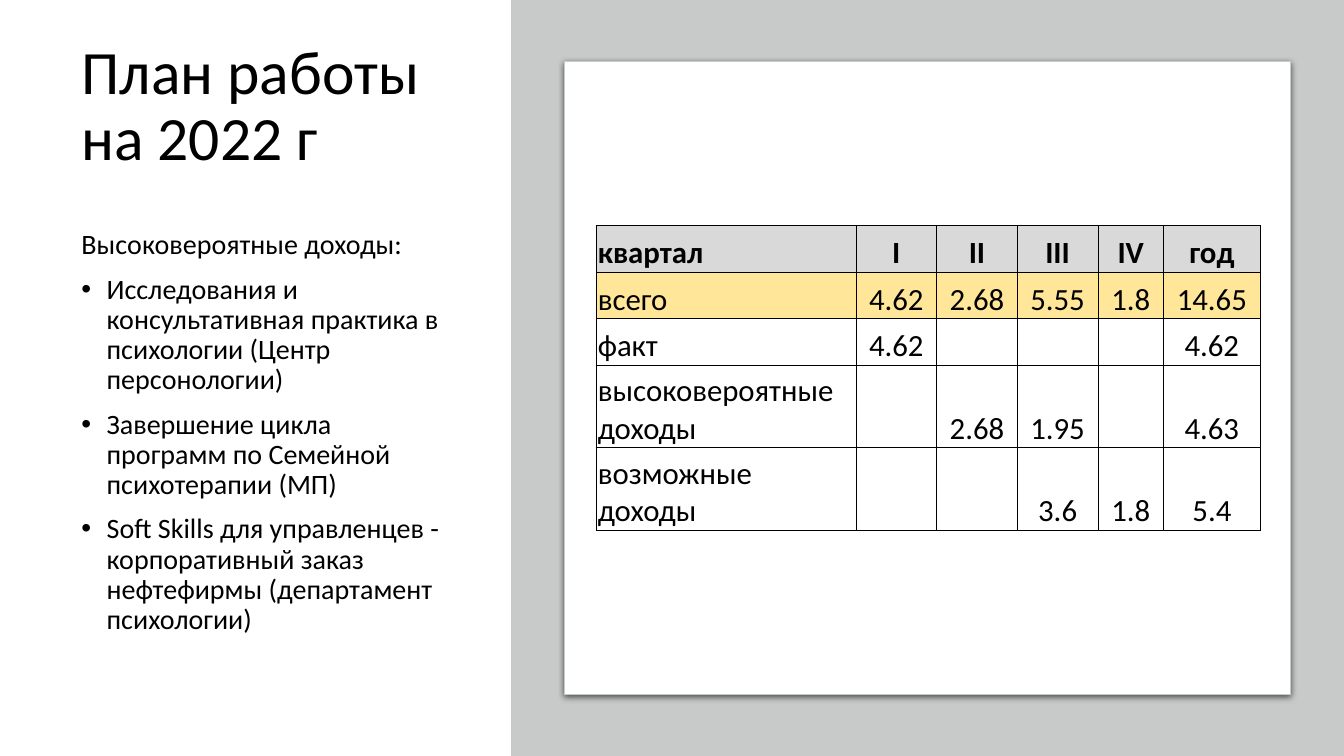
from dataclasses import dataclass
from typing import Optional

from lxml.etree import SubElement
from pptx import Presentation
from pptx.dml.color import RGBColor
from pptx.enum.shapes import MSO_SHAPE as Preset
from pptx.enum.text import MSO_ANCHOR as Anchor, PP_ALIGN as Align
from pptx.oxml.ns import qn
from pptx.util import Inches, Pt

FONT = "Calibri"
BLACK, WHITE, GRAY = "000000", "FFFFFF", "C8CACA"


@dataclass
class TextBlock:
    top: float
    height: float
    size: float
    anchor: Anchor
    lines: list[str]
    space_before: float = 0
    first_bullet: int = 99


@dataclass
class Panel:
    preset: Preset
    left: float
    top: float
    width: float
    height: float
    fill: str
    line: Optional[str] = None
    shadow: bool = False


@dataclass
class TableRow:
    height: float
    values: list[str]
    fill: Optional[str] = None
    bold: bool = False


TEXT_BLOCKS = [
    TextBlock(0.18, 1.77, 44, Anchor.MIDDLE, ["План работы на 2022 г"]),
    TextBlock(2.24, 4.14, 20, Anchor.TOP, [
        "Высоковероятные доходы:",
        "Исследования и консультативная практика в психологии (Центр персонологии)",
        "Завершение цикла программ по Семейной психотерапии (МП)",
        "Soft Skills для управленцев - корпоративный заказ нефтефирмы "
        "(департамент психологии)",
    ], space_before=10, first_bullet=1),
]
PANELS = [
    Panel(Preset.RECTANGLE, 5.07, 0, 8.26, 7.5, GRAY),
    Panel(Preset.ROUNDED_RECTANGLE, 5.6, 0.61, 7.2, 6.28, WHITE, GRAY, True),
]
COLUMN_WIDTHS = [2.58, 0.8, 0.8, 0.8, 0.65, 0.96]
TABLE_ROWS = [
    TableRow(0.46, ["квартал", "I", "II", "III", "IV", "год"], "D9D9D9", True),
    TableRow(0.46, ["всего", "4.62", "2.68", "5.55", "1.8", "14.65"], "FFE699"),
    TableRow(0.46, ["факт", "4.62", "", "", "", "4.62"]),
    TableRow(0.82, ["высоковероятные доходы", "", "2.68", "1.95", "", "4.63"]),
    TableRow(0.82, ["возможные доходы", "", "", "3.6", "1.8", "5.4"]),
]


def color(value: str) -> RGBColor:
    return RGBColor.from_string(value)


def format_runs(paragraph, size: float, bold: bool = False) -> None:
    for run in paragraph.runs:
        run.font.name = FONT
        run.font.size = Pt(size)
        run.font.bold = bold
        run.font.color.rgb = color(BLACK)


def add_bullet(paragraph) -> None:
    properties = paragraph._p.get_or_add_pPr()
    properties.set("marL", str(Inches(0.25)))
    properties.set("indent", str(-Inches(0.25)))
    SubElement(properties, qn("a:buFont"), typeface="Arial")
    SubElement(properties, qn("a:buChar"), char="•")


def add_text_block(slide, block: TextBlock) -> None:
    shape = slide.shapes.add_textbox(
        Inches(0.71), Inches(block.top), Inches(3.83), Inches(block.height))
    frame = shape.text_frame
    frame.word_wrap = True
    frame.vertical_anchor = block.anchor
    frame.text = "\n".join(block.lines)
    for index, paragraph in enumerate(frame.paragraphs):
        paragraph.line_spacing = 0.9
        paragraph.space_before = Pt(block.space_before)
        if index >= block.first_bullet:
            add_bullet(paragraph)
        format_runs(paragraph, block.size)


def add_shadow(shape) -> None:
    effects = shape._element.spPr.find(qn("a:effectLst"))
    shadow = SubElement(effects, qn("a:outerShdw"), blurRad=str(Pt(4.5)),
                        dist=str(Pt(1.5)), dir="5400000", algn="t", rotWithShape="0")
    tint = SubElement(shadow, qn("a:srgbClr"), val=BLACK)
    SubElement(tint, qn("a:alpha"), val="63000")


def add_panel(slide, panel: Panel) -> None:
    shape = slide.shapes.add_shape(
        panel.preset, Inches(panel.left), Inches(panel.top),
        Inches(panel.width), Inches(panel.height))
    if panel.preset == Preset.ROUNDED_RECTANGLE:
        shape.adjustments[0] = 0
    shape.fill.solid()
    shape.fill.fore_color.rgb = color(panel.fill)
    if panel.line:
        shape.line.color.rgb = color(panel.line)
        shape.line.width = Pt(0.75)
    else:
        shape.line.fill.background()
    shape.shadow.inherit = False
    if panel.shadow:
        add_shadow(shape)


def add_borders(cell) -> None:
    properties = cell._tc.get_or_add_tcPr()
    for side in ("lnL", "lnR", "lnT", "lnB"):
        border = SubElement(properties, qn(f"a:{side}"), w=str(Pt(0.5)))
        fill = SubElement(border, qn("a:solidFill"))
        SubElement(fill, qn("a:srgbClr"), val=BLACK)


def fill_cell(cell, row: TableRow, column: int) -> None:
    cell.text = row.values[column]
    cell.vertical_anchor = Anchor.BOTTOM
    cell.margin_left = cell.margin_right = cell.margin_top = Inches(0.02)
    cell.margin_bottom = 0
    paragraph = cell.text_frame.paragraphs[0]
    paragraph.alignment = Align.CENTER if column else Align.LEFT
    format_runs(paragraph, 22, row.bold)
    add_borders(cell)  # borders must precede the fill in the cell properties
    if row.fill:
        cell.fill.solid()
        cell.fill.fore_color.rgb = color(row.fill)
    else:
        cell.fill.background()


def add_income_table(slide) -> None:
    table = slide.shapes.add_table(
        len(TABLE_ROWS), len(COLUMN_WIDTHS), Inches(5.91), Inches(2.24),
        Inches(sum(COLUMN_WIDTHS)), Inches(sum(row.height for row in TABLE_ROWS))).table
    table.first_row = table.horz_banding = False
    for column, width in enumerate(COLUMN_WIDTHS):
        table.columns[column].width = Inches(width)
    for index, row in enumerate(TABLE_ROWS):
        table.rows[index].height = Inches(row.height)
        for column in range(len(COLUMN_WIDTHS)):
            fill_cell(table.cell(index, column), row, column)


def main() -> None:
    presentation = Presentation()
    presentation.slide_width = Inches(13.33)
    presentation.slide_height = Inches(7.5)
    slide = presentation.slides.add_slide(presentation.slide_layouts[6])
    for block in TEXT_BLOCKS:
        add_text_block(slide, block)
    for panel in PANELS:
        add_panel(slide, panel)
    add_income_table(slide)
    presentation.save("out.pptx")


if __name__ == "__main__":
    main()
